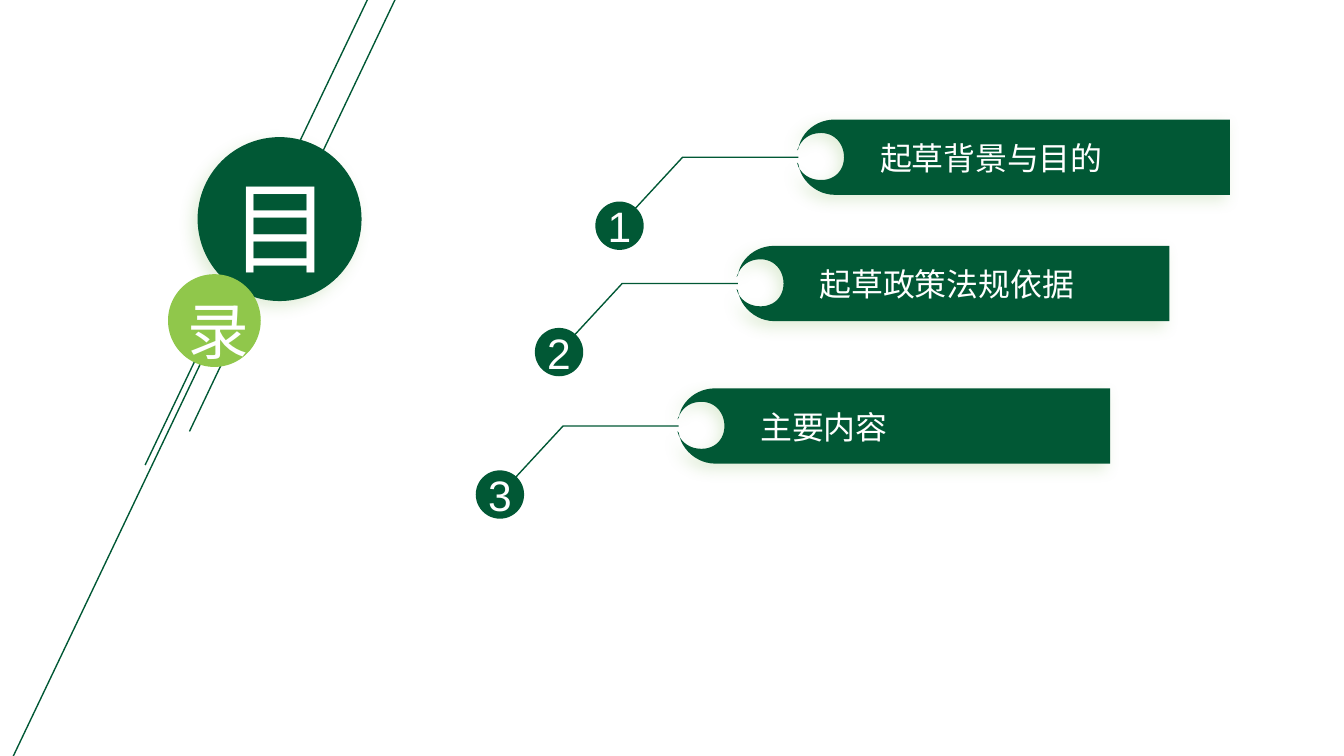
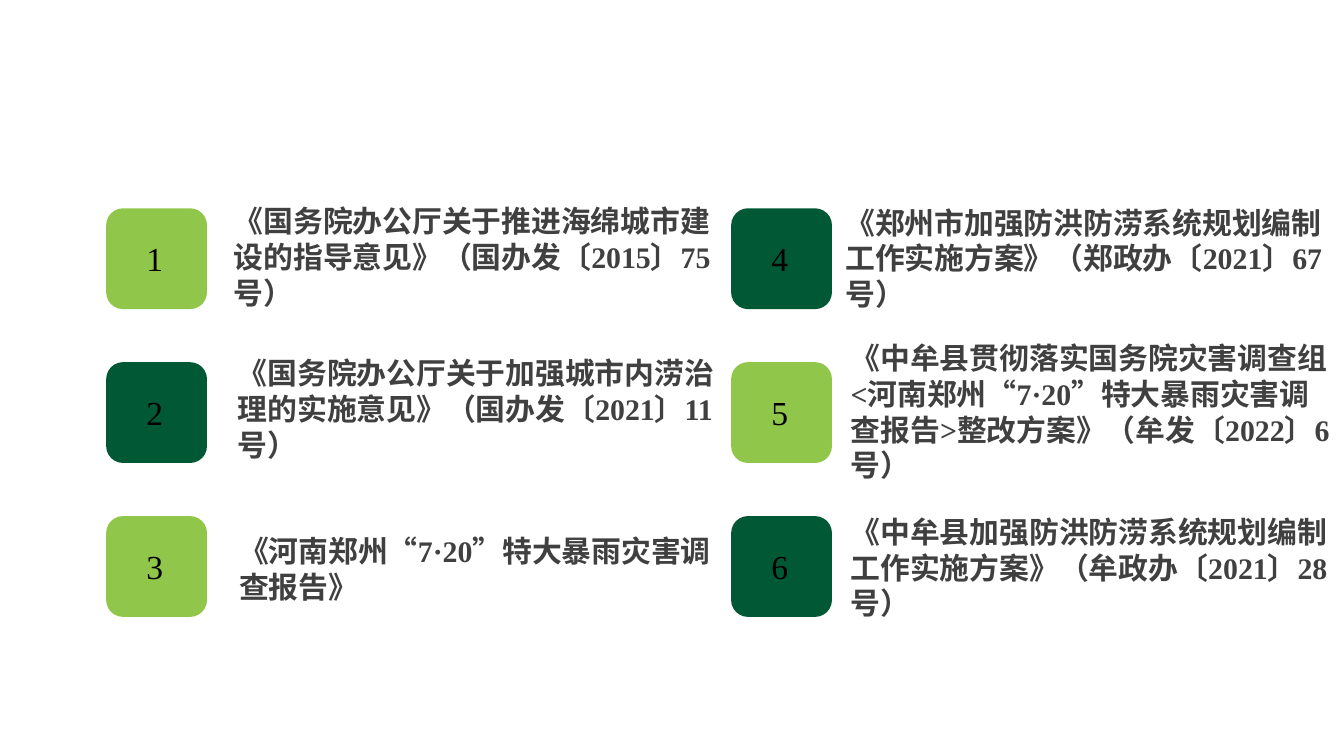
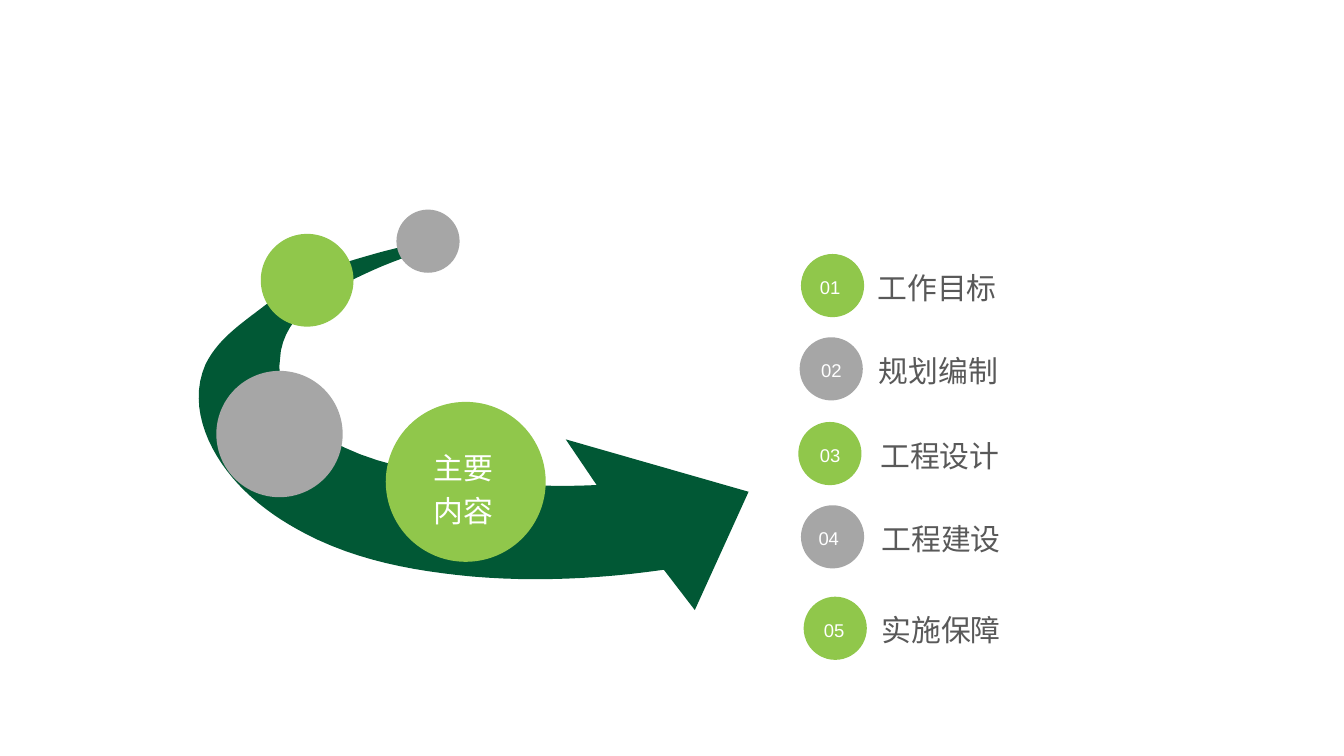
from lxml import etree
from pptx import Presentation
from pptx.dml.color import RGBColor
from pptx.enum.shapes import MSO_CONNECTOR, MSO_SHAPE as SHAPE
from pptx.enum.text import MSO_ANCHOR as ANCHOR, PP_ALIGN as ALIGN
from pptx.oxml.ns import qn
from pptx.util import Inches, Pt

DARK = RGBColor(0x01, 0x58, 0x35)
LIME = RGBColor(0x90, 0xC7, 0x4B)
GRAY = RGBColor(0xA6, 0xA6, 0xA6)
WHITE = RGBColor(0xFF, 0xFF, 0xFF)
BLACK = RGBColor(0, 0, 0)
INK = RGBColor(0x40, 0x40, 0x40)
LABEL = RGBColor(0x59, 0x59, 0x59)
SHADOW = "70AD47"
CJK = "Noto Sans CJK SC"


def add_text(sp, text, size=16, font="Arial", color=WHITE, bold=False, align=ALIGN.LEFT,
             anchor=ANCHOR.TOP, insets=(0.1, 0.05), wrap=True, spacing=None):
    tf = sp.text_frame
    tf.word_wrap = wrap
    tf.vertical_anchor = anchor
    tf.margin_left = tf.margin_right = Inches(insets[0])
    tf.margin_top = tf.margin_bottom = Inches(insets[1])
    p = tf.paragraphs[0]
    p.alignment = align
    p.line_spacing = spacing
    r = p.add_run()
    r.text = text
    r.font.size, r.font.name, r.font.bold = Pt(size), font, bold
    r.font.color.rgb = color
    etree.SubElement(r.font._element, qn("a:ea"), typeface=CJK)


def add_figure(s, geom, box=None, fill=None, line=None, shadow=False, shift=(0, 0)):
    """geom is a preset, or a path: 2 numbers are a line, 6 a Bezier curve."""
    if isinstance(geom, list):
        pts = [geom[0]]
        for seg in geom[1:]:
            x0, y0 = pts[-1]
            if len(seg) == 2:
                pts.append(seg)
                continue
            x1, y1, x2, y2, x3, y3 = seg
            for t in (i / 12 for i in range(1, 13)):
                a, b, c, d = (1 - t) ** 3, 3 * t * (1 - t) ** 2, 3 * t * t * (1 - t), t ** 3
                pts.append((a * x0 + b * x1 + c * x2 + d * x3,
                            a * y0 + b * y1 + c * y2 + d * y3))
        pts = [(Inches(x + shift[0]), Inches(y + shift[1])) for x, y in pts]
        builder = s.shapes.build_freeform(*pts[0])
        builder.add_line_segments(pts[1:], close=fill is not None)
        sp = builder.convert_to_shape()
    else:
        sp = s.shapes.add_shape(geom, *map(Inches, box))
    if fill is None:
        sp.fill.background()
    else:
        sp.fill.solid()
        sp.fill.fore_color.rgb = fill
    if line is None:
        sp.line.fill.background()
    else:
        sp.line.color.rgb = line
        sp.line.width = Pt(0.75)
    sp.shadow.inherit = False
    if shadow:
        effects = sp._element.spPr.find(qn("a:effectLst"))
        outer = etree.SubElement(effects, qn("a:outerShdw"), blurRad=str(Pt(8)), dist=str(Pt(4)),
                                 dir=str(135 * 60000), algn="tr", rotWithShape="0")
        clr = etree.SubElement(outer, qn("a:srgbClr"), val=SHADOW)
        etree.SubElement(clr, qn("a:alpha"), val="20000")
    return sp


prs = Presentation()
prs.slide_width = Inches(10)
prs.slide_height = prs.slide_width * 9 // 16
blank = prs.slide_layouts[6]

# Slide 1: contents
s = prs.slides.add_slide(blank)

# Slanted lines, placed behind the title discs
for x1, y1, x2, y2 in [(1.41, 3.21, 3, -0.13), (1.08, 3.46, 3.12, -0.81), (-1.63, 9.25, 1.49, 2.71)]:
    ln = s.shapes.add_connector(MSO_CONNECTOR.STRAIGHT, *map(Inches, (x1, y1, x2, y2)))
    ln.line.color.rgb = DARK
    ln.line.width = Pt(0.75)
    etree.SubElement(ln._element.spPr, qn("a:effectLst"))

# Title discs
for char, size, disc, box, fill in [
    ("目", 54, (1.47, 1.02, 1.22, 1.22), (1.62, 1.18, 0.92, 1.01), DARK),
    ("录", 33, (1.25, 2.04, 0.69, 0.69), (1.3, 2.13, 0.61, 0.66), LIME),
]:
    add_figure(s, SHAPE.OVAL, disc, fill, shadow=fill == DARK)
    add_text(s.shapes.add_textbox(*map(Inches, box)), char, size, CJK, align=ALIGN.CENTER)

# Banners with a round notch, each stepping down and to the left
banner = [
    (6.21, 0.89), (9.15, 0.89), (9.15, 1.45), (6.21, 1.45),
    (6.08, 1.45, 5.96, 1.35, 5.94, 1.22), (5.93, 1.21), (5.94, 1.24),
    (5.97, 1.3, 6.03, 1.34, 6.11, 1.34), (6.21, 1.34, 6.28, 1.27, 6.28, 1.17),
    (6.28, 1.07, 6.21, 0.99, 6.11, 0.99), (6.03, 0.99, 5.97, 1.03, 5.94, 1.1),
    (5.93, 1.12), (5.94, 1.11), (5.96, 0.98, 6.08, 0.89, 6.21, 0.89),
]
elbow = [(4.71, 1.57), (5.08, 1.17), (5.94, 1.17)]
chapters = [("起草背景与目的", 0, 0), ("起草政策法规依据", -0.45, 0.94), ("主要内容", -0.89, 2)]
for i, (title, dx, dy) in enumerate(chapters):
    add_figure(s, banner, fill=DARK, shadow=True, shift=(dx, dy))
    add_figure(s, elbow, line=DARK, shift=(dx, dy))
    sp = add_figure(s, SHAPE.OVAL, (4.43 + dx, 1.5 + dy, 0.36, 0.36), DARK)
    add_text(sp, str(i + 1), 22.8, align=ALIGN.CENTER, anchor=ANCHOR.MIDDLE, insets=(0, 0.05))
    sp = s.shapes.add_textbox(*map(Inches, (6.45 + dx, 0.98 + dy, 2.5, 0.39)))
    add_text(sp, title, 17.1, "Calibri")

# Slide 2: policy documents, three rows in two columns
s = prs.slides.add_slide(blank)
documents = [
    ("《国务院办公厅关于推进海绵城市建设的指导意见》（国办发〔2015〕75号）", 1.74, 1.57),
    ("《国务院办公厅关于加强城市内涝治理的实施意见》（国办发〔2021〕11号）", 1.77, 2.7),
    ("《河南郑州“7·20”特大暴雨灾害调查报告》", 1.78, 3.89),
    ("《郑州市加强防洪防涝系统规划编制工作实施方案》（郑政办〔2021〕67号）", 6.29, 1.58),
    ("《中牟县贯彻落实国务院灾害调查组<河南郑州“7·20”特大暴雨灾害调查报告>整改方案》"
     "（牟发〔2022〕6号）", 6.33, 2.72),
    ("《中牟县加强防洪防涝系统规划编制工作实施方案》（牟政办〔2021〕28号）", 6.33, 3.88),
]
for i, (title, x, y) in enumerate(documents):
    col, row = divmod(i, 3)
    left, top = 0.79 + 4.65 * col, 1.55 + 1.145 * row
    add_figure(s, SHAPE.ROUNDED_RECTANGLE, (left, top, 0.75, 0.75), DARK if i % 2 else LIME)
    sp = s.shapes.add_textbox(*map(Inches, (left + 0.2, top + 0.17, 0.38, 0.4)))
    add_text(sp, str(i + 1), 18, "Times New Roman", BLACK)
    sp = s.shapes.add_textbox(*map(Inches, (x, y, 3.63 if col == 0 else 3.61, 0.68)))
    add_text(sp, title, 16, "Times New Roman", INK, bold=True, anchor=ANCHOR.MIDDLE, insets=(0, 0.08))

# Slide 3: main content
s = prs.slides.add_slide(blank)

# Curved arrow
arrow = [
    (3.28, 1.78), (3.41, 1.8), (3.11, 1.87, 2.84, 1.97, 2.59, 2.1),
    (2.37, 2.21, 2.14, 2.35, 2.09, 2.61), (1.99, 3.11, 2.54, 3.39, 3.07, 3.49),
    (3.29, 3.54, 3.51, 3.57, 3.74, 3.59), (3.97, 3.62, 4.2, 3.62, 4.44, 3.61),
    (4.21, 3.27), (5.57, 3.66), (5.17, 4.54), (4.94, 4.24),
    (4.45, 4.31, 3.97, 4.33, 3.51, 4.29), (3.08, 4.25, 2.65, 4.17, 2.27, 3.97),
    (2.02, 3.84, 1.8, 3.67, 1.65, 3.45), (1.5, 3.23, 1.42, 2.96, 1.53, 2.71),
    (1.61, 2.55, 1.74, 2.45, 1.87, 2.35), (1.99, 2.26, 2.1, 2.17, 2.23, 2.11),
    (2.39, 2.01, 2.57, 1.95, 2.75, 1.9), (2.92, 1.85, 3.1, 1.81, 3.28, 1.78),
]
add_figure(s, arrow, fill=DARK)

# Discs growing along the arrow
for x, y, d, fill in [(2.95, 1.56, 0.47, GRAY), (1.94, 1.74, 0.69, LIME),
                      (1.61, 2.76, 0.94, GRAY), (2.87, 2.99, 1.19, LIME)]:
    add_figure(s, SHAPE.OVAL, (x, y, d, d), fill)
sp = s.shapes.add_textbox(*map(Inches, (3.14, 3.29, 0.62, 0.65)))
add_text(sp, "主要内容", align=ALIGN.CENTER, insets=(0, 0), spacing=1.2)

# Numbered list: disc x and y, number x, label x
items = [
    ("工作目标", 5.96, 1.89, 6.1, 6.53),
    ("规划编制", 5.95, 2.51, 6.11, 6.54),
    ("工程设计", 5.94, 3.14, 6.1, 6.55),
    ("工程建设", 5.96, 3.76, 6.09, 6.56),
    ("实施保障", 5.98, 4.44, 6.13, 6.56),
]
for i, (title, x, y, number_x, title_x) in enumerate(items):
    add_figure(s, SHAPE.OVAL, (x, y, 0.47, 0.47), GRAY if i % 2 else LIME)
    sp = s.shapes.add_textbox(*map(Inches, (title_x, y + 0.06, 0.95, 0.32)))
    add_text(sp, title, color=LABEL, insets=(0, 0), spacing=1.2)
    sp = s.shapes.add_textbox(*map(Inches, (number_x, y + 0.13, 0.18, 0.2)))
    add_text(sp, f"{i + 1:02}", 9.9, anchor=ANCHOR.MIDDLE, insets=(0, 0), spacing=1.2)

prs.save("out.pptx")
